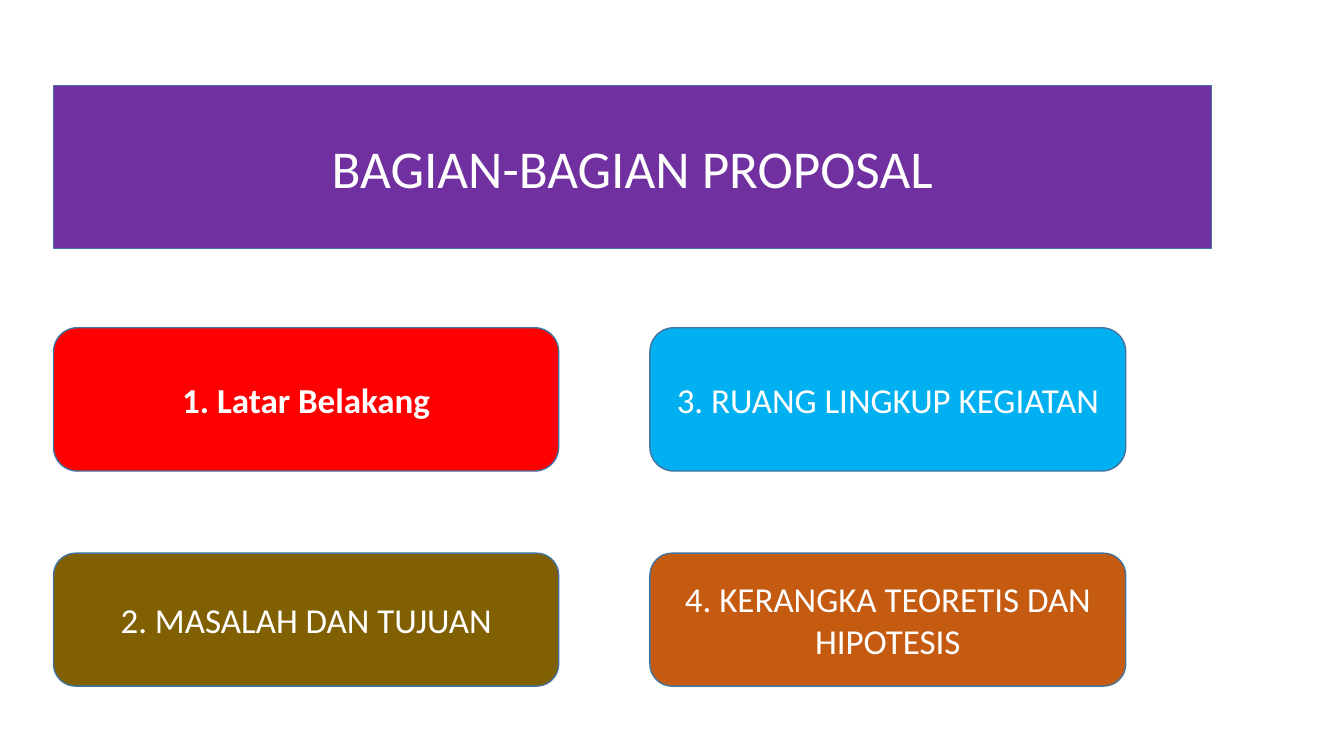
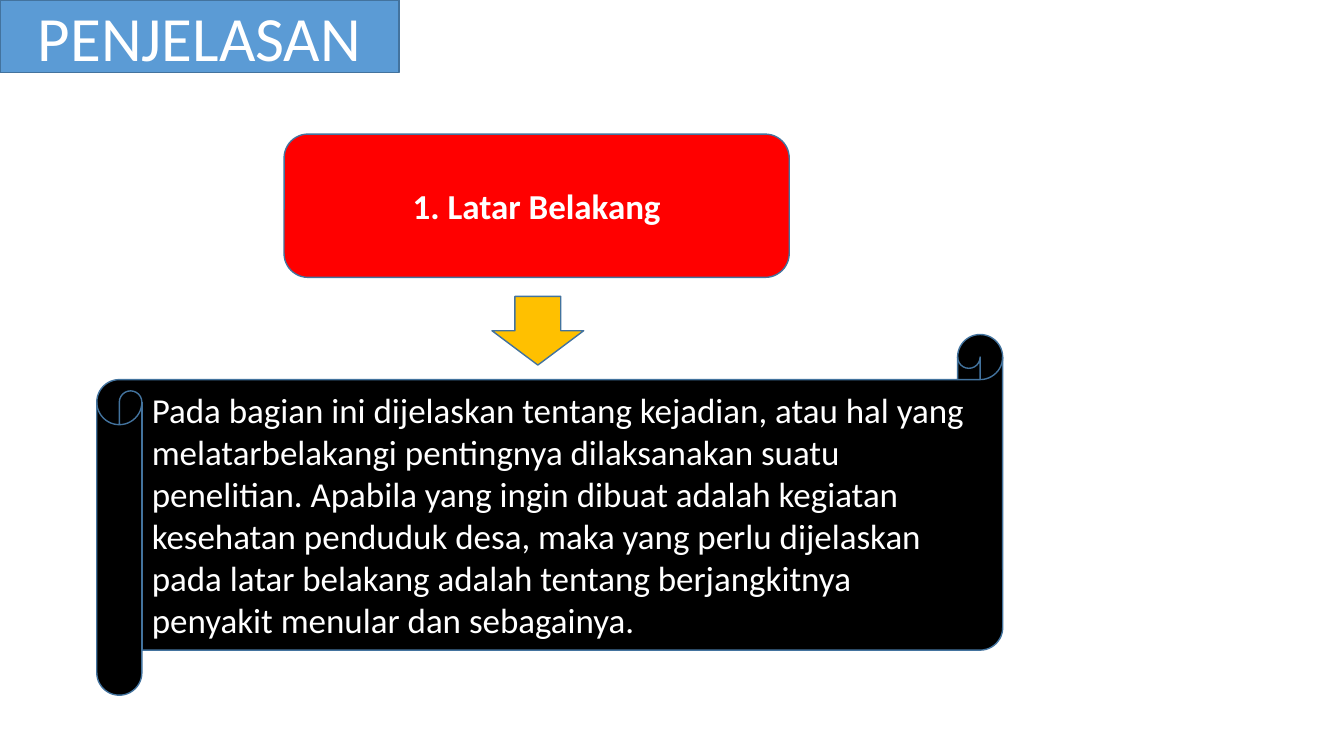
"""Build two slides on the parts of a proposal and their explanation."""
from pptx import Presentation
from pptx.dml.color import RGBColor
from pptx.enum.shapes import MSO_SHAPE as Shape
from pptx.enum.text import MSO_ANCHOR as Anchor, PP_ALIGN as Align
from pptx.util import Cm, Pt

COLORS = {
    "outline": "43739E",
    "text": "FFFFFF",
    "purple": "7030A0",
    "red": "FF0000",
    "olive": "806000",
    "sky": "00B0F0",
    "rust": "C55A11",
    "blue": "5B9BD5",
    "black": "000000",
    "gold": "FFC000",
}
FONT = "Calibri"
BACKGROUND = ("1. Latar Belakang", "red", True)
CARD_WIDTH, CARD_HEIGHT = 12.73, 3.61
COLUMNS = [(1.35, CARD_WIDTH), (16.38, 11.99)]
ROWS = [(8.26, CARD_HEIGHT), (13.94, 3.35)]
PARTS = [
    [BACKGROUND, ("2. MASALAH DAN TUJUAN", "olive", False)],
    [("3. RUANG LINGKUP KEGIATAN", "sky", False),
     ("4. KERANGKA TEORETIS DAN HIPOTESIS", "rust", False)],
]
EXPLANATION = (
    "Pada bagian ini dijelaskan tentang kejadian, atau hal yang "
    "melatarbelakangi pentingnya dilaksanakan suatu penelitian. Apabila "
    "yang ingin dibuat adalah kegiatan kesehatan penduduk desa, maka yang "
    "perlu dijelaskan pada latar belakang adalah tentang berjangkitnya "
    "penyakit menular dan sebagainya."
)


def color(name):
    return RGBColor.from_string(COLORS[name])


def add_figure(slide, outline, box, fill):
    figure = slide.shapes.add_shape(outline, *map(Cm, box))
    figure.shadow.inherit = False
    figure.fill.solid()
    figure.fill.fore_color.rgb = color(fill)
    figure.line.color.rgb = color("outline")
    figure.line.width = Pt(1)
    return figure


def write(figure, text, size=25, bold=False, align=Align.CENTER):
    frame = figure.text_frame
    frame.word_wrap = True
    frame.vertical_anchor = Anchor.MIDDLE
    paragraph = frame.paragraphs[0]
    paragraph.alignment = align
    run = paragraph.add_run()
    run.text = text
    run.font.name = FONT
    run.font.size = Pt(size)
    run.font.bold = bold
    run.font.color.rgb = color("text")


def add_title(slide, text, box, fill, size):
    write(add_figure(slide, Shape.RECTANGLE, box, fill), text, size=size)


def add_card(slide, part, box):
    text, fill, bold = part
    write(add_figure(slide, Shape.ROUNDED_RECTANGLE, box, fill), text, bold=bold)


def build_parts(slide):
    add_title(slide, "BAGIAN-BAGIAN PROPOSAL", (1.35, 2.16, 29.18, 4.11), "purple", 38)
    for (left, width), column in zip(COLUMNS, PARTS):
        for (top, height), part in zip(ROWS, column):
            add_card(slide, part, (left, top, width, height))


def build_explanation(slide):
    add_title(slide, "PENJELASAN", (0, 0, 10.06, 1.83), "blue", 45)
    add_card(slide, BACKGROUND, (7.16, 3.38, CARD_WIDTH, CARD_HEIGHT))
    scroll = add_figure(slide, Shape.HORIZONTAL_SCROLL, (2.44, 8.43, 22.83, 9.09), "black")
    write(scroll, EXPLANATION, align=Align.LEFT)
    add_figure(slide, Shape.DOWN_ARROW, (12.4, 7.47, 2.31, 1.73), "gold")


def main():
    deck = Presentation()
    deck.slide_width, deck.slide_height = Cm(33.87), Cm(19.05)
    blank = deck.slide_layouts[6]
    for build in (build_parts, build_explanation):
        build(deck.slides.add_slide(blank))
    deck.save("out.pptx")


if __name__ == "__main__":
    main()
